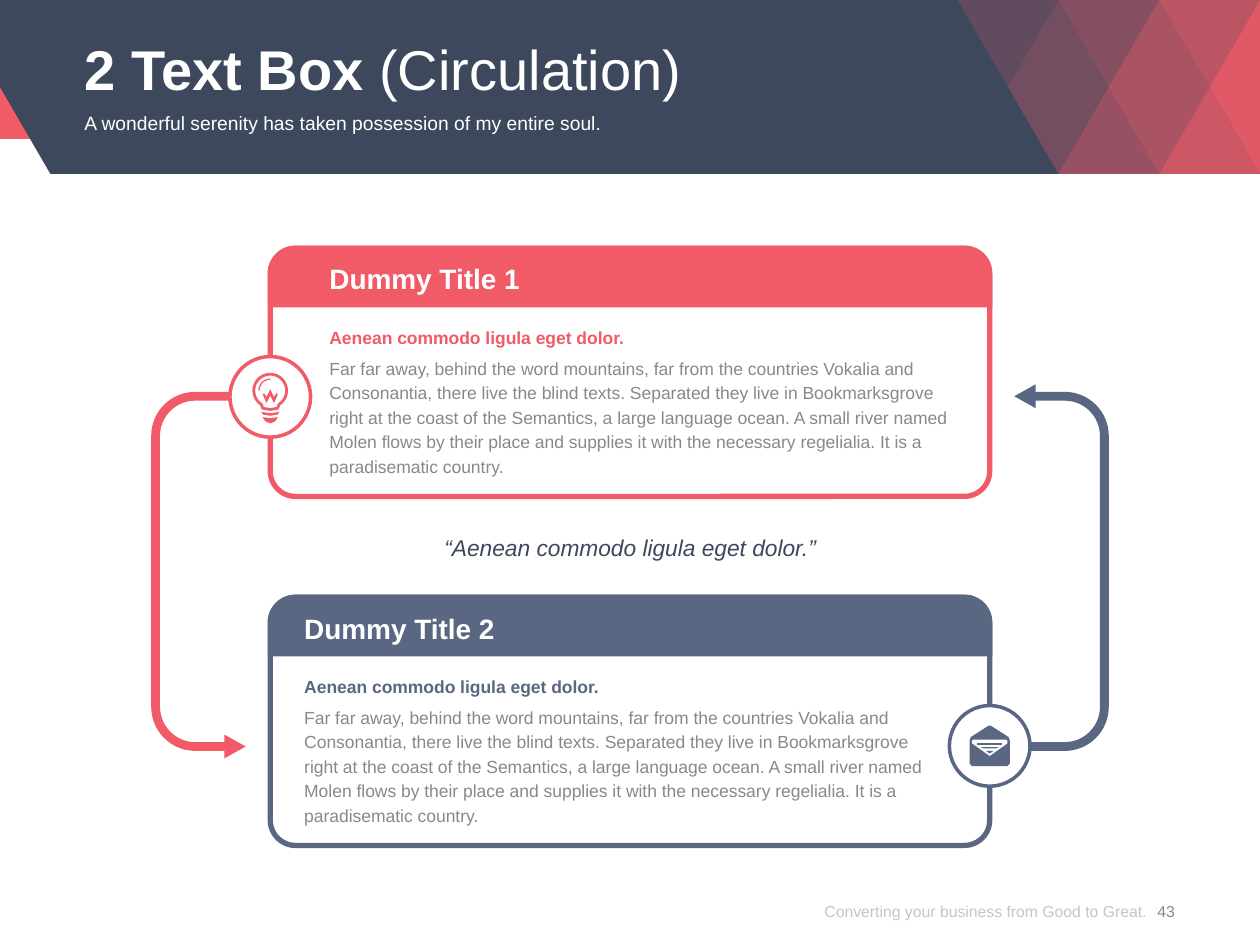
import math

import pptx
import pptx.dml.color
import pptx.enum.shapes
import pptx.enum.text
import pptx.oxml.ns
import pptx.util
from lxml import etree

RGB = pptx.dml.color.RGBColor
RED = RGB(0xF1, 0x5B, 0x67)
BLUE = RGB(0x5A, 0x67, 0x83)
NAVY = RGB(0x3D, 0x48, 0x5D)
GRAY = RGB(0x85, 0x89, 0x8F)
PALE = RGB(0xC5, 0xC5, 0xC5)
WHITE = RGB(0xFF, 0xFF, 0xFF)

SHAPE = pptx.enum.shapes.MSO_SHAPE
ALIGN = pptx.enum.text.PP_ALIGN
ANCHOR = pptx.enum.text.MSO_ANCHOR
Inches = pptx.util.Inches
Pt = pptx.util.Pt

W, H = 10, 7.5
LEAD = "Aenean commodo ligula eget dolor."
BODY = ("Far far away, behind the word mountains, far from the countries Vokalia and "
        "Consonantia, there live the blind texts. Separated they live in Bookmarksgrove "
        "right at the coast of the Semantics, a large language ocean. A small river named "
        "Molen flows by their place and supplies it with the necessary regelialia. It is a "
        "paradisematic country.")


def paint(sp, fill=None, line=None, width=1, alpha=None):
    sp.shadow.inherit = False
    if fill is None:
        sp.fill.background()
    else:
        sp.fill.solid()
        sp.fill.fore_color.rgb = fill
    if line is None:
        sp.line.fill.background()
    else:
        sp.line.color.rgb = line
        sp.line.width = Pt(width)
    if alpha is not None:
        clr = sp.fill._xPr.find(".//" + pptx.oxml.ns.qn("a:srgbClr"))
        etree.SubElement(clr, pptx.oxml.ns.qn("a:alpha"), val=str(alpha * 1000))
    return sp


def preset(s, kind, x, y, w, h, **style):
    sp = s.shapes.add_shape(kind, Inches(x), Inches(y), Inches(w), Inches(h))
    return paint(sp, **style)


def outline(s, points, close=True, **style):
    pts = [(Inches(x), Inches(y)) for x, y in points]
    fb = s.shapes.build_freeform(*pts[0], scale=1.0)
    fb.add_line_segments(pts[1:], close=close)
    return paint(fb.convert_to_shape(), **style)


def arc(cx, cy, r, start, end, steps=16):
    """Points on a circle; angles in degrees, clockwise from the right."""
    angles = [math.radians(start + (end - start) * i / steps) for i in range(steps + 1)]
    return [(cx + r * math.cos(a), cy + r * math.sin(a)) for a in angles]


def text(s, x, y, w, h, runs, size, color, align=ALIGN.LEFT, anchor=ANCHOR.TOP,
         spacing=None, italic=False):
    tf = s.shapes.add_textbox(Inches(x), Inches(y), Inches(w), Inches(h)).text_frame
    tf.word_wrap = True
    tf.vertical_anchor = anchor
    tf.margin_left = tf.margin_right = tf.margin_top = tf.margin_bottom = 0
    p = tf.paragraphs[0]
    p.alignment = align
    if spacing:
        p.line_spacing = Pt(spacing)
    for words, bold in runs:
        r = p.add_run()
        r.text = words
        r.font.name = "Arial"
        r.font.size = Pt(size)
        r.font.bold = bold
        r.font.italic = italic
        r.font.color.rgb = color


def header(s, x, y, w, h):
    preset(s, SHAPE.RECTANGLE, x, y, w, 0.8 * h, fill=RED)
    outline(s, [(x, y), (x + w, y), (x + w, y + h), (x + 0.4, y + h), (x, y + h / 2)],
            fill=NAVY)
    # Mosaic: triangles pointing down and up by turns, cut off at the right edge
    step, right = 0.4, x + w
    left = right - 6 * step
    for row, alphas in enumerate([(20, 30, 40, 60, 70, 90), (30, 50, 60, 80, 90)]):
        top, bottom = y + row * h / 2, y + (row + 1) * h / 2
        for k, alpha in enumerate(alphas):
            mid = left + (1 + row + k) * step
            base, tip = (bottom, top) if k % 2 else (top, bottom)
            outline(s, [(mid - step, base), (min(mid + step, right), base), (mid, tip)],
                    fill=RED, alpha=alpha)
    # Title and subtitle
    text(s, x + 0.67, y + 0.19, 8.66, 0.65, [("2 Text Box ", True), ("(Circulation)", False)],
         32, WHITE, anchor=ANCHOR.MIDDLE, spacing=42)
    text(s, x + 0.67, y + 0.88, 8.66, 0.39,
         [("A wonderful serenity has taken possession of my entire soul.", False)], 11, WHITE)


def loop_arrow(s, x, y, w, h, color, turned=False):
    """Bent arrow down the left side; turned makes a half turn within the box."""
    thick, radius, head, overhang = 0.07, 0.35, 0.17, 0.06
    inner, neck, end = radius - thick, w - head, h - overhang
    low = end - radius
    pts = [(w, end - thick / 2), (neck, end - thick - overhang), (neck, end - thick),
           *arc(radius, low, inner, 90, 180), *arc(radius, radius, inner, 180, 270),
           (0.63, thick), (0.63, 0),
           *arc(radius, radius, radius, 270, 180), *arc(radius, low, radius, 180, 90),
           (neck, end), (neck, h)]
    if turned:
        pts = [(w - px, h - py) for px, py in pts]
    outline(s, [(x + px, y + py) for px, py in pts], fill=color)


def card(s, x, y, w, h, title, color, indent):
    edge, bar = 0.04, 0.49
    frame = preset(s, SHAPE.ROUNDED_RECTANGLE, x + edge / 2, y + edge / 2, w - edge, h - edge,
                   line=color, width=3)
    frame.adjustments[0] = 0.2 / (h - edge)
    top = preset(s, SHAPE.ROUND_2_SAME_RECTANGLE, x, y, w, bar, fill=color)
    top.adjustments[0] = 0.22 / bar
    tx, tw = x + indent, 5.04
    text(s, tx, y + 0.13, tw, 0.27, [(title, True)], 16, WHITE)
    text(s, tx, y + 0.62, tw, 0.18, [(LEAD, True)], 10, color, spacing=14)
    text(s, tx, y + 0.86, tw, 0.98, [(BODY, False)], 10, GRAY, spacing=14)


def badge(s, cx, cy, color):
    preset(s, SHAPE.OVAL, cx - 0.32, cy - 0.32, 0.64, 0.64, fill=WHITE, line=color, width=2)


def bulb(s, cx, cy, color):
    badge(s, cx, cy, color)

    def at(points):
        return [(cx + px, cy + py) for px, py in points]

    # Glass and its highlight
    outline(s, at([(-0.06, 0.09), *arc(0, -0.05, 0.13, 122, 418, 32), (0.06, 0.09),
                   (0, 0.1)]), line=color, width=1.6)
    outline(s, at(arc(0, -0.05, 0.09, 180, 270)), close=False, line=color, width=0.75)
    # Filament
    outline(s, at([(-0.05, -0.03), (-0.03, 0.0), (0, -0.06), (0.03, 0.0), (0.05, -0.03),
                   (0.06, -0.02), (0.03, 0.05), (0, -0.01), (-0.03, 0.05), (-0.06, -0.02)]),
            fill=color)
    # Screw thread and foot
    outline(s, at([(-0.07, 0.12), (0, 0.13), (0.07, 0.12), (0.06, 0.14), (0, 0.15),
                   (-0.06, 0.14)]), fill=color)
    outline(s, at([(-0.06, 0.16), (0, 0.17), (0.06, 0.16), (0.05, 0.18), (0.03, 0.2),
                   (0, 0.21), (-0.03, 0.2), (-0.05, 0.18)]), fill=color)


def envelope(s, cx, cy, color):
    badge(s, cx, cy, color)
    # Half outlines from top to bottom, mirrored about the centre line
    parts = [
        (color, [(0.01, -0.16), (0.15, -0.07), (0.16, -0.04), (0.16, 0.14), (0.14, 0.16)]),
        (WHITE, [(0.13, -0.05), (0.14, -0.04), (0.14, -0.02), (0, 0.08)]),
        (color, [(0.1, -0.02), (0.1, -0.01)]),
        (color, [(0.07, 0.01), (0.05, 0.02)]),
        (color, [(0.03, 0.04), (0, 0.06)]),
    ]
    for fill, half in parts:
        pts = half + [(-px, py) for px, py in reversed(half)]
        outline(s, [(cx + px, cy + py) for px, py in pts], fill=fill)


def footer(s, x, y, w, h):
    text(s, x, y, 3.06, h, [("Converting your business from Good to Great.", False)],
         9, PALE, ALIGN.RIGHT, ANCHOR.MIDDLE)
    text(s, x + w - 0.47, y, 0.47, h, [("43", False)], 9, GRAY, ALIGN.CENTER, ANCHOR.MIDDLE)


def main():
    prs = pptx.Presentation()
    prs.slide_width, prs.slide_height = Inches(W), Inches(H)
    s = prs.slides.add_slide(prs.slide_layouts[6])

    header(s, 0, 0, W, 1.38)

    # Two cards, centred, with the loop running round them
    card_w, card_h, top, pitch = 5.75, 2.01, 1.95, 2.77
    left = (W - card_w) / 2
    loop_w, loop_h = 0.75, 2.91
    loop_arrow(s, 1.2, 3.11, loop_w, loop_h, RED)
    loop_arrow(s, W - 1.2 - loop_w, 3.05, loop_w, loop_h, BLUE, turned=True)
    card(s, left, top, card_w, card_h, "Dummy Title 1", RED, 0.49)
    card(s, left, top + pitch, card_w, card_h, "Dummy Title 2", BLUE, 0.29)
    bulb(s, left + 0.02, top + 1.2, RED)
    envelope(s, left + card_w - 0.02, top + pitch + 1.2, BLUE)

    # Quote between the cards
    text(s, 2.6, 4.26, 4.8, 0.2, [("“" + LEAD + "”", False)], 13, NAVY, ALIGN.CENTER,
         spacing=14, italic=True)

    footer(s, 6.04, 6.96, 3.45, 0.54)
    prs.save("out.pptx")


if __name__ == "__main__":
    main()
